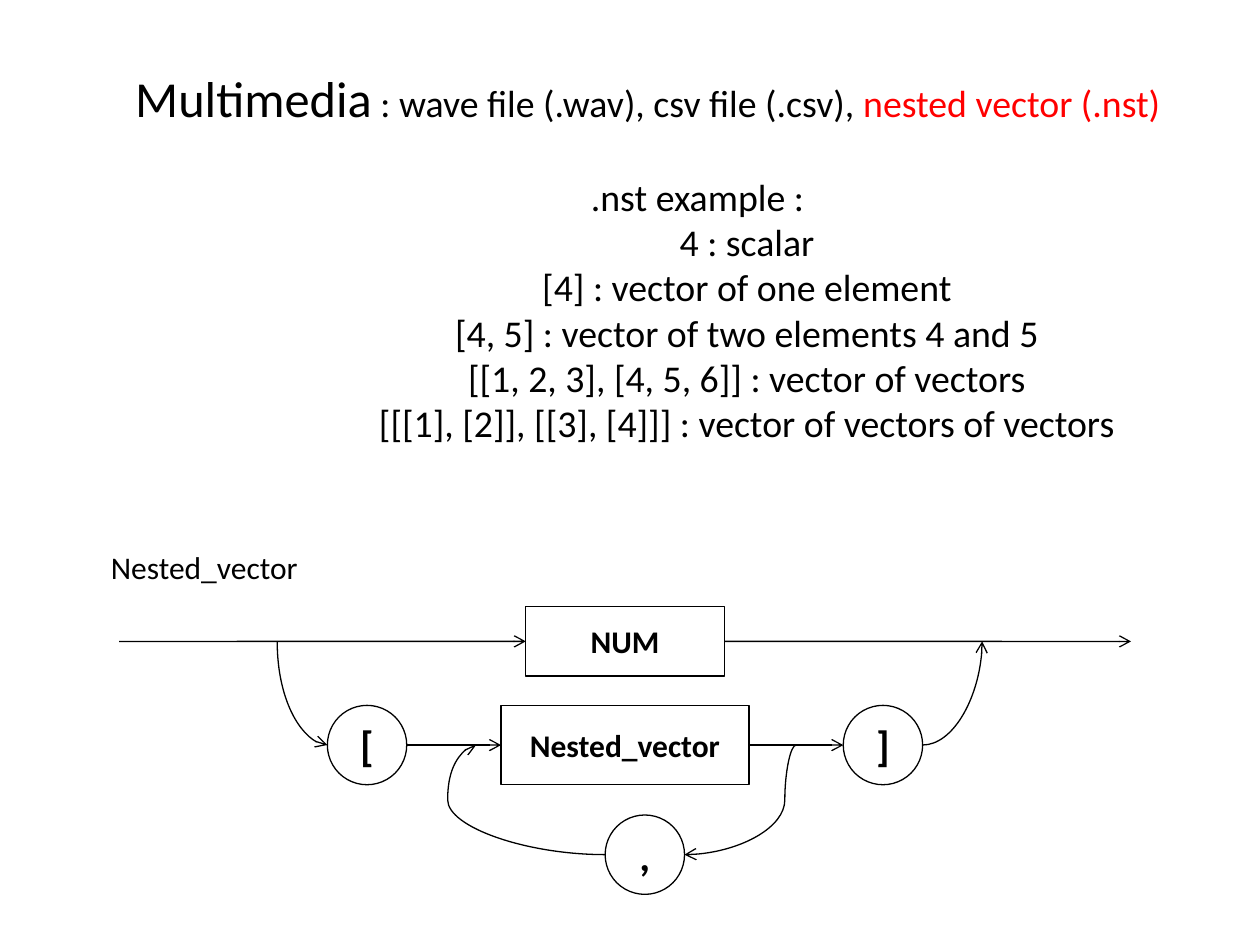
from pptx import Presentation
from pptx import util as u
from pptx.dml.color import RGBColor
from pptx.enum import shapes, text
from pptx.oxml.ns import qn
from lxml import etree

Cm, Pt = u.Cm, u.Pt
KIND, LINK = shapes.MSO_SHAPE, shapes.MSO_CONNECTOR
MID = text.PP_ALIGN.CENTER
BLACK, RED = "000000", "FF0000"


def write(para, words, size, color=BLACK, bold=False):
    """Add one run to a centred paragraph."""
    para.alignment = MID
    run = para.add_run()
    run.text = words
    run.font.name = "Calibri"
    run.font.size = Pt(size)
    run.font.bold = bold
    run.font.color.rgb = RGBColor.from_string(color)


def link(kind, x1, y1, x2, y2, end="tailEnd"):
    """Draw a thin black connector with an open arrowhead at one end."""
    wire = pic.add_connector(kind, Cm(x1), Cm(y1), Cm(x2), Cm(y2))
    wire.line.color.rgb = RGBColor.from_string(BLACK)
    wire.line.width = Pt(0.75)
    props = wire._element.spPr
    etree.SubElement(props.find(qn("a:ln")), qn("a:" + end), type="arrow")
    etree.SubElement(props, qn("a:effectLst"))
    return wire


prs = Presentation()
prs.slide_width, prs.slide_height = Cm(25.4), Cm(19.05)
slide = prs.slides.add_slide(prs.slide_layouts[5])
pic = slide.shapes

# Title with the indented examples
title = pic.title
title.left, title.top, title.width, title.height = Cm(0.74), Cm(1.93), Cm(24.64), Cm(6.48)
frame = title.text_frame
frame.auto_size = text.MSO_AUTO_SIZE.NONE
frame.vertical_anchor = text.MSO_ANCHOR.MIDDLE
head = frame.paragraphs[0]
write(head, "Multimedia", 28.8)
write(head, "\u00a0: wave file (.wav), csv file (.csv), ".replace("\u00a0", " "), 21.6)
write(head, "nested vector (.nst)", 21.6, RED)

lines = [
    (1, ".nst example : "),
    (2, "4 : scalar"),
    (2, "[4] : vector of one element"),
    (2, "[4, 5] : vector of two elements 4 and 5"),
    (2, "[[1, 2, 3], [4, 5, 6]] : vector of vectors"),
    (2, "[[[1], [2]], [[3], [4]]] : vector of vectors of vectors"),
]
for level, words in lines:
    para = frame.add_paragraph()
    write(para, words.strip(), 21.6)
    props = para._p.get_or_add_pPr()
    props.set("marL", str(Cm(2 * level)))
    props.set("indent", "0")
    if level == 1:
        para.space_before = Pt(26)

# Grammar nodes, centred on three rows
TOP, ROW, LOW = 12.93, 15.02, 17.23
nodes = [
    (KIND.RECTANGLE, "NUM", 10.6, TOP, 4, 1.4, 18),
    (KIND.RECTANGLE, "Nested_vector", 10.1, ROW, 5, 1.6, 18),
    (KIND.OVAL, "[", 6.6, ROW, 1.6, 1.6, 24),
    (KIND.OVAL, "]", 17, ROW, 1.6, 1.6, 24),
    (KIND.OVAL, ",", 12.2, LOW, 1.6, 1.6, 24),
]
made = {}
for kind, words, x, mid, w, h, size in nodes:
    node = pic.add_shape(kind, Cm(x), Cm(mid - h / 2), Cm(w), Cm(h))
    node.shadow.inherit = False
    node.fill.background()
    node.line.color.rgb = RGBColor.from_string(BLACK)
    node.line.width = Pt(0.75)
    frame = node.text_frame
    frame.margin_left = frame.margin_right = frame.margin_top = frame.margin_bottom = 0
    frame.vertical_anchor = text.MSO_ANCHOR.MIDDLE
    write(frame.paragraphs[0], words, size, bold=True)
    made[words] = node

# Straight arrows into and out of each box
for name, y, start, left, right, stop in [
    ("NUM", TOP, 2.4, 10.6, 14.6, 22.8),
    ("Nested_vector", ROW, 8.2, 10.1, 15.1, 17),
]:
    link(LINK.STRAIGHT, start, y, left, y).end_connect(made[name], 1)
    link(LINK.STRAIGHT, right, y, stop, y).begin_connect(made[name], 3)

# Quarter bends leave a circle sideways and meet the top line upright
for x1, x2, end in [(6.6, 5.59, "headEnd"), (18.6, 19.8, "tailEnd")]:
    bend = link(LINK.CURVE, x1, ROW, x2, TOP, end)
    bend._element.spPr.prstGeom.set("prst", "curvedConnector2")

# Loop back through the comma
for x1, y1, x2, y2, adj in [
    (16.05, ROW, 13.8, LOW, 10100),
    (12.2, LOW, 9.6, ROW, 122100),
]:
    loop = link(LINK.CURVE, x1, y1, x2, y2)
    guides = loop._element.spPr.prstGeom.get_or_add_avLst()
    etree.SubElement(guides, qn("a:gd"), name="adj1", fmla=f"val {adj}")

label = pic.add_textbox(Cm(1.63), Cm(10.62), Cm(4.98), Cm(1.6))
frame = label.text_frame
frame.word_wrap = True
frame.vertical_anchor = text.MSO_ANCHOR.MIDDLE
write(frame.paragraphs[0], "Nested_vector", 18)

prs.save("out.pptx")
